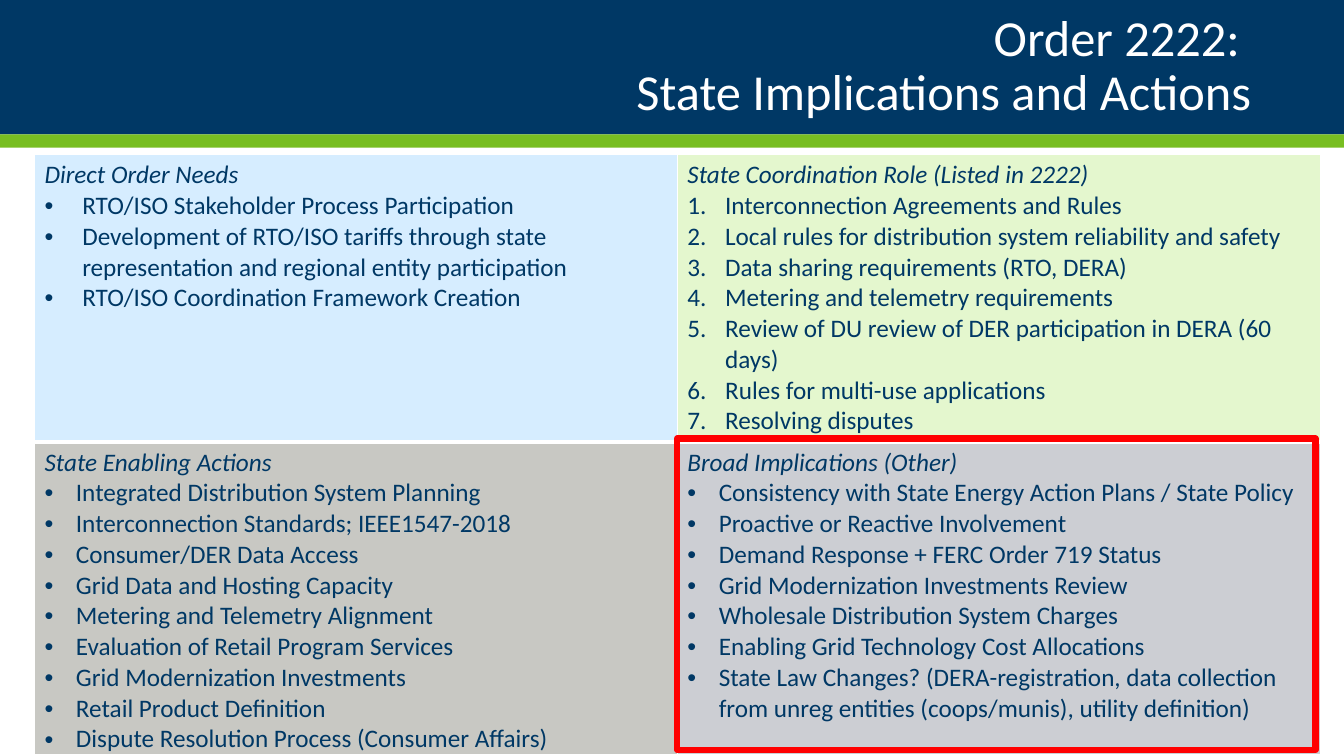
from dataclasses import dataclass

from pptx import Presentation
from pptx.dml.color import RGBColor as RGB
from pptx.enum.shapes import MSO_SHAPE as Shape
from pptx.enum.text import MSO_ANCHOR as Anchor, PP_ALIGN as Align
from pptx.oxml.xmlchemy import OxmlElement as Element
from pptx.util import Cm, Pt

TITLE = "Order 2222: \vState Implications and Actions"

# Each cell: heading, items, numbered, indent in cm, fill
CELLS = [
    [
        ("Direct Order Needs", [
            "RTO/ISO Stakeholder Process Participation",
            "Development of RTO/ISO tariffs through state representation"
            " and regional entity participation",
            "RTO/ISO Coordination Framework Creation",
        ], False, 0.95, "D6EDFF"),
        ("State Coordination Role (Listed in 2222)", [
            "Interconnection Agreements and Rules",
            "Local rules for distribution system reliability and safety",
            "Data sharing requirements (RTO, DERA)",
            "Metering and telemetry requirements",
            "Review of DU review of DER participation in DERA (60 days)",
            "Rules for multi-use applications",
            "Resolving disputes",
        ], True, 0.95, "E4F7CE"),
    ],
    [
        ("State Enabling Actions", [
            "Integrated Distribution System Planning",
            "Interconnection Standards; IEEE1547-2018",
            "Consumer/DER Data Access",
            "Grid Data and Hosting Capacity",
            "Metering and Telemetry Alignment",
            "Evaluation of Retail Program Services",
            "Grid Modernization Investments",
            "Retail Product Definition",
            "Dispute Resolution Process (Consumer Affairs)",
        ], False, 0.79, "C8C8C3"),
        ("Broad Implications (Other)", [
            "Consistency with State Energy Action Plans / State Policy",
            "Proactive or Reactive Involvement",
            "Demand Response + FERC Order 719 Status",
            "Grid Modernization Investments Review",
            "Wholesale Distribution System Charges",
            "Enabling Grid Technology Cost Allocations",
            "State Law Changes? (DERA-registration, data collection from"
            " unreg entities (coops/munis), utility definition)",
        ], False, 0.79, "CCCED3"),
    ],
]


@dataclass(frozen=True)
class Theme:
    font: str = "Calibri"
    navy: str = "003865"
    green: str = "78BE21"
    white: str = "FFFFFF"
    red: str = "FF0000"
    title: int = 36
    body: int = 18
    frame: float = 4.5


THEME = Theme()
WIDTH, HEIGHT = 33.87, 19.05
BAND, STRIPE = 3.39, 0.33
LEFT, TOP, COL = 0.87, 3.9, 16.2
ROWS = [7.24, 7.75]


def color(code):
    return RGB.from_string(code)


def add_box(slide, left, top, width, height, fill=None, line=None):
    box = slide.shapes.add_shape(
        Shape.RECTANGLE, Cm(left), Cm(top), Cm(width), Cm(height))
    box.shadow.inherit = False
    if fill:
        box.fill.solid()
        box.fill.fore_color.rgb = color(fill)
    else:
        box.fill.background()
    if line:
        box.line.color.rgb = color(line)
        box.line.width = Pt(THEME.frame)
    else:
        box.line.fill.background()


def style(para, size, code, italic=False):
    for run in para.runs:
        font = run.font
        font.name, font.size = THEME.font, Pt(size)
        font.color.rgb = color(code)
        font.bold, font.italic = False, italic


def add_mark(para, indent, numbered):
    """Give a paragraph a hanging bullet or number."""
    props = para._p.get_or_add_pPr()
    props.set("marL", str(Cm(indent)))
    props.set("indent", str(-Cm(indent)))
    face = Element("a:buFont")
    face.set("typeface", "Arial")
    mark = Element("a:buAutoNum" if numbered else "a:buChar")
    if numbered:
        mark.set("type", "arabicPeriod")
    else:
        mark.set("char", "•")
    props.extend([face, mark])


def set_edges(cell, low):
    """Draw white borders; low is the bottom width in points."""
    props = cell._tc.get_or_add_tcPr()
    for side, width in zip("LRTB", (1, 1, 1, low)):
        line = Element(f"a:ln{side}")
        line.set("w", str(Pt(width)))
        fill = Element("a:solidFill")
        tint = Element("a:srgbClr")
        tint.set("val", THEME.white)
        fill.append(tint)
        line.append(fill)
        props.append(line)


def fill_cell(cell, data, low):
    head, items, numbered, indent, fill = data
    set_edges(cell, low)
    cell.fill.solid()
    cell.fill.fore_color.rgb = color(fill)
    cell.text_frame.text = "\n".join([head, *items])
    for i, para in enumerate(cell.text_frame.paragraphs):
        style(para, THEME.body, THEME.navy, italic=i == 0)
        if i:
            add_mark(para, indent, numbered)


def add_title(slide):
    box = slide.shapes.add_textbox(Cm(2.33), 0, Cm(29.21), Cm(BAND))
    frame = box.text_frame
    frame.word_wrap = True
    frame.vertical_anchor = Anchor.MIDDLE
    frame.margin_left = frame.margin_right = 0
    para = frame.paragraphs[0]
    para.text = TITLE
    para.alignment = Align.RIGHT
    para.line_spacing = 0.9
    style(para, THEME.title, THEME.white)


def add_grid(slide):
    table = slide.shapes.add_table(
        len(CELLS), 2, Cm(LEFT), Cm(TOP), Cm(2 * COL), Cm(sum(ROWS))).table
    table.first_row = table.horz_banding = False
    for col in table.columns:
        col.width = Cm(COL)
    for r, row in enumerate(CELLS):
        table.rows[r].height = Cm(ROWS[r])
        for c, data in enumerate(row):
            fill_cell(table.cell(r, c), data, low=1 if r else 3)


def main():
    deck = Presentation()
    deck.slide_width, deck.slide_height = Cm(WIDTH), Cm(HEIGHT)
    slide = deck.slides.add_slide(deck.slide_layouts[6])
    add_box(slide, 0, 0, WIDTH, BAND, fill=THEME.navy)
    add_box(slide, 0, BAND, WIDTH, STRIPE, fill=THEME.green)
    add_title(slide)
    add_grid(slide)
    add_box(slide, LEFT + COL, 11.05, 16.08, 7.85, line=THEME.red)
    deck.save("out.pptx")


if __name__ == "__main__":
    main()
